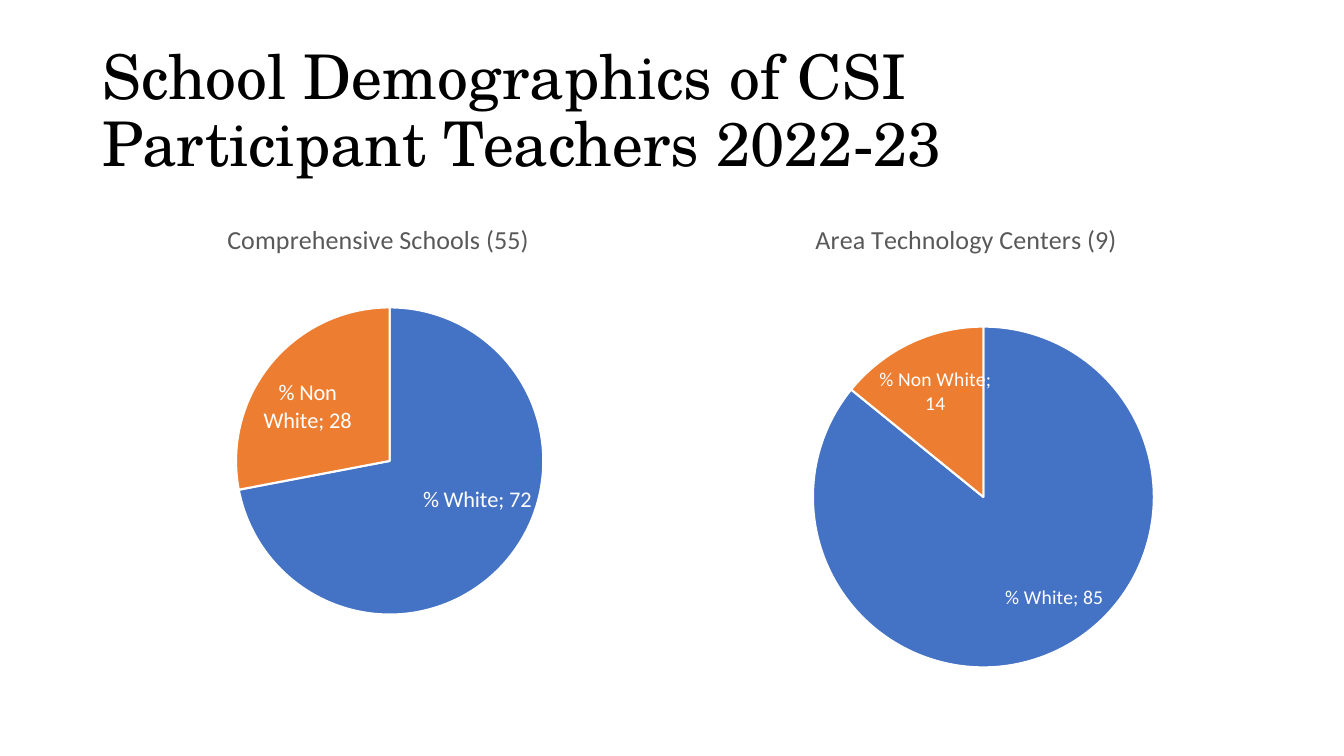
"""Build a slide with two pie charts of school demographics."""
import pptx
import pptx.chart.data
import pptx.dml.color
import pptx.enum.chart
import pptx.enum.text
import pptx.oxml.ns
import pptx.oxml.xmlchemy
import pptx.util

COLORS = {"white": "FFFFFF", "black": "000000", "gray": "595959",
          "blue": "4472C4", "orange": "ED7D31"}
qn = pptx.oxml.ns.qn


def style_font(font, size, color, name):
    for attribute, value in {"size": pptx.util.Pt(size), "name": name, "bold": False}.items():
        setattr(font, attribute, value)
    font.color.rgb = pptx.dml.color.RGBColor.from_string(COLORS[color])


def add_layout(parent, index, values):
    for previous in parent.findall(qn("c:layout")):
        parent.remove(previous)
    layout = parent.makeelement(qn("c:layout"), {})
    manual = layout.makeelement(qn("c:manualLayout"), {})
    layout.append(manual)
    for tag, value in values.items():
        manual.append(manual.makeelement(qn(f"c:{tag}"), {"val": str(value)}))
    parent.insert(index, layout)


presentation = pptx.Presentation()
presentation.slide_width = pptx.util.Inches(13.33)
presentation.slide_height = pptx.util.Inches(7.5)
width, height = presentation.slide_width, presentation.slide_height
margin = int(width * 0.069)
slide = presentation.slides.add_slide(presentation.slide_layouts[5])

title = slide.shapes.title
title_box = {"left": margin, "top": int(height * 0.053),
             "width": int(width * 0.8625), "height": int(height * 0.193)}
for attribute, value in title_box.items():
    setattr(title, attribute, value)
title.text_frame.text = "School Demographics of CSI Participant Teachers 2022-23"
title.text_frame.vertical_anchor = pptx.enum.text.MSO_ANCHOR.MIDDLE
title.text_frame.auto_size = pptx.enum.text.MSO_AUTO_SIZE.NONE
title.text_frame.word_wrap = True
paragraph = title.text_frame.paragraphs[0]
paragraph.alignment = pptx.enum.text.PP_ALIGN.LEFT
paragraph.line_spacing = 0.9
style_font(paragraph.runs[0].font, 44, "black", "TeX Gyre Schola")

pies = [
    {"name": "Comprehensive Schools (55)", "values": (72, 28), "label_size": 16,
     "plot": (0.25, 0.22, 0.54, 0.64), "offsets": [(0.05, -0.02), (-0.04, -0.01)]},
    {"name": "Area Technology Centers (9)", "values": (85, 14), "label_size": 14,
     "plot": (0.23, 0.26, 0.6, 0.71), "offsets": [(0.06, 0.05), (-0.02, -0.06)]},
]
for column, pie in enumerate(pies):
    data = pptx.chart.data.CategoryChartData()
    data.categories = ["% White", "% Non White"]
    data.add_series(pie["name"], pie["values"])
    chart = slide.shapes.add_chart(
        pptx.enum.chart.XL_CHART_TYPE.PIE, margin + int(width * 0.4375 * column),
        int(height * 0.267), int(width * 0.425), int(height * 0.635), data).chart
    style_font(chart.font, 10, "black", "Calibri")
    chart.has_legend = False
    chart.has_title = True
    chart.chart_title.include_in_layout = False
    chart.chart_title.text_frame.text = pie["name"]
    heading = chart.chart_title.text_frame.paragraphs[0].runs[0]
    style_font(heading.font, 18.6, "gray", "Calibri")

    plot = chart.plots[0]
    plot.vary_by_categories = True
    for index, color in enumerate(("blue", "orange")):
        point = plot.series[0].points[index]
        point.format.fill.solid()
        point.format.fill.fore_color.rgb = pptx.dml.color.RGBColor.from_string(COLORS[color])
        point.format.line.width = pptx.util.Pt(1.5)
        point.format.line.color.rgb = pptx.dml.color.RGBColor.from_string(COLORS["white"])
        style_font(point.data_label.font, pie["label_size"], "white", "Calibri")
        point.data_label.position = pptx.enum.chart.XL_LABEL_POSITION.CENTER

    labels = list(chart.element.iter(qn("c:dLbl")))
    for label, (shift_x, shift_y) in zip(labels, pie["offsets"]):
        add_layout(label, 1, {"x": shift_x, "y": shift_y})
        label.find(qn("c:showCatName")).set("val", "1")
        separator = label.makeelement(qn("c:separator"), {})
        separator.text = "; "
        label.append(separator)

    plot_area = next(chart.element.iter(qn("c:plotArea")))
    left, top, share_wide, share_high = pie["plot"]
    add_layout(plot_area, 0, {"layoutTarget": "inner", "xMode": "edge", "yMode": "edge",
                              "x": left, "y": top, "w": share_wide, "h": share_high})

presentation.save("out.pptx")
